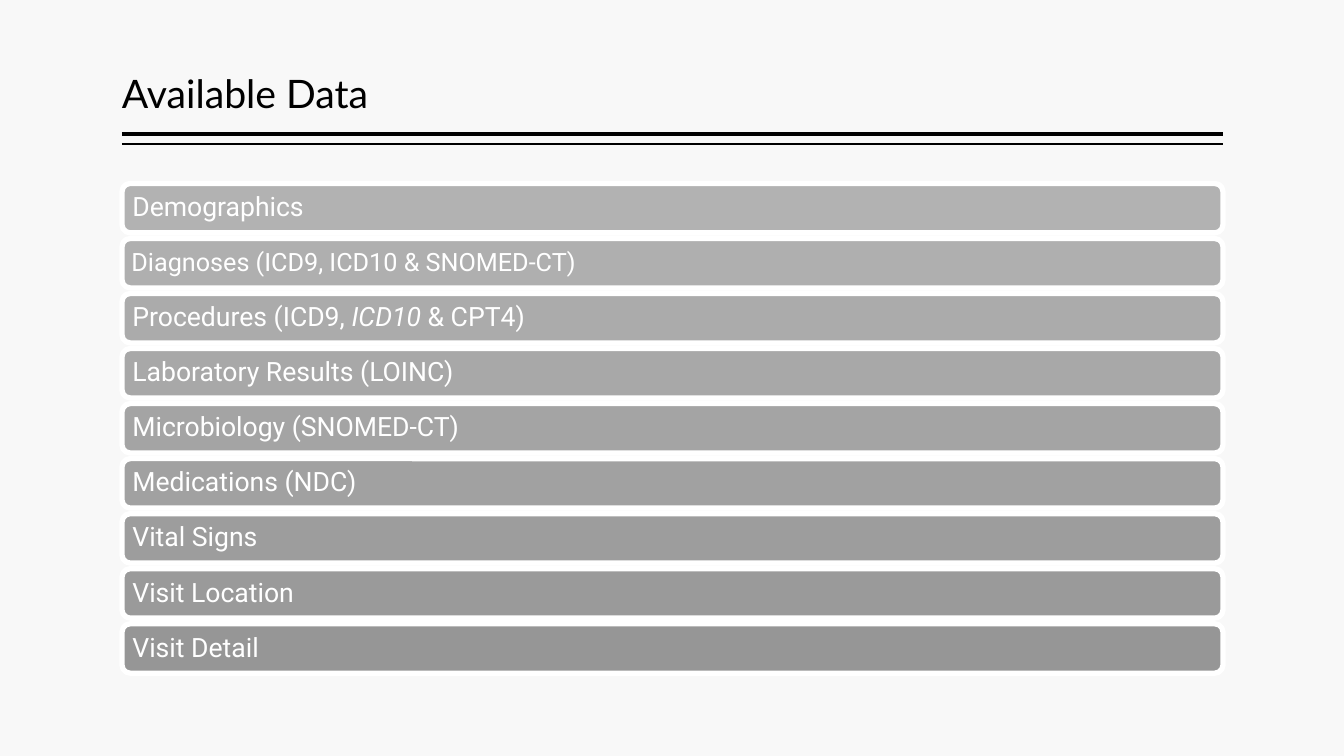
"""Build the Available Data slide."""
from dataclasses import dataclass

from lxml.etree import SubElement
from pptx import Presentation
from pptx.dml.color import RGBColor
from pptx.enum.shapes import MSO_CONNECTOR, MSO_SHAPE
from pptx.enum.text import MSO_ANCHOR, MSO_AUTO_SIZE, PP_ALIGN
from pptx.oxml.ns import qn
from pptx.util import Inches, Pt


@dataclass(frozen=True)
class Theme:
    """Colours, fonts and type sizes."""
    back: RGBColor = RGBColor(0xF8, 0xF8, 0xF8)
    ink: RGBColor = RGBColor(0, 0, 0)
    white: RGBColor = RGBColor(255, 255, 255)
    light: int = 0xB2
    head: str = "Lato"
    body: str = "Roboto"
    title: int = 28
    item: int = 19
    small: int = 18

    def shade(self, row):
        """Return the grey of a row, 3.5 levels darker each time."""
        return RGBColor(*[self.light - 7 * row // 2] * 3)


THEME = Theme()
LEFT, WIDTH = 1.21, 10.92
TOP, PITCH, HEIGHT = 1.82, 0.546, 0.49
RULES = [(1.33, 3), (1.43, 1)]
ITEMS = [
    [("Demographics", False)],
    [("Diagnoses (ICD9, ICD10 & SNOMED-CT)", False)],
    [("Procedures (ICD9, ", False), ("ICD10", True), (" & CPT4)", False)],
    [("Laboratory Results (LOINC)", False)],
    [("Microbiology (SNOMED-CT)", False)],
    [("Medications (NDC)", False)],
    [("Vital Signs", False)],
    [("Visit Location", False)],
    [("Visit Detail", False)],
]
SMALL_ROW = 1


def set_frame(frame, anchor, side, edge):
    """Set the anchor, wrap and insets of a text frame."""
    frame.auto_size = MSO_AUTO_SIZE.NONE
    frame.word_wrap = True
    frame.vertical_anchor = anchor
    frame.margin_left = frame.margin_right = Inches(side)
    frame.margin_top = frame.margin_bottom = Inches(edge)


def add_text(frame, runs, face, size, color):
    """Write runs of (text, italic) in the first paragraph."""
    para = frame.paragraphs[0]
    para.alignment = PP_ALIGN.LEFT
    para.line_spacing = 0.9
    for text, slant in runs:
        run = para.add_run()
        run.text = text
        font = run.font
        font.name, font.size, font.italic = face, Pt(size), slant
        font.color.rgb = color


def add_title(slide, text):
    """Place and fill the title."""
    title = slide.shapes.title
    title.left, title.top = Inches(LEFT), Inches(0.08)
    title.width, title.height = Inches(9.35), Inches(1.13)
    set_frame(title.text_frame, MSO_ANCHOR.BOTTOM, 0, 0.05)
    add_text(title.text_frame, [(text, False)],
             THEME.head, THEME.title, THEME.ink)


def add_rule(slide, top, weight):
    """Draw a rule below the title."""
    rule = slide.shapes.add_connector(
        MSO_CONNECTOR.STRAIGHT, Inches(LEFT), Inches(top),
        Inches(LEFT + WIDTH), Inches(top))
    rule.line.color.rgb = THEME.ink
    rule.line.width = Pt(weight)
    SubElement(rule._element.spPr, qn("a:effectLst"))


def add_bar(slide, row, runs):
    """Draw one rounded bar with its label."""
    bar = slide.shapes.add_shape(
        MSO_SHAPE.ROUNDED_RECTANGLE, Inches(LEFT),
        Inches(TOP + row * PITCH), Inches(WIDTH), Inches(HEIGHT))
    bar.shadow.inherit = False
    bar.fill.solid()
    bar.fill.fore_color.rgb = THEME.shade(row)
    bar.line.color.rgb = THEME.white
    bar.line.width = Pt(3.78)
    small = row == SMALL_ROW
    inset = 0.07 if small else 0.08
    set_frame(bar.text_frame, MSO_ANCHOR.MIDDLE, inset, inset)
    add_text(bar.text_frame, runs, THEME.body,
             THEME.small if small else THEME.item, THEME.white)


def main():
    """Build and save the slide."""
    deck = Presentation()
    deck.slide_width, deck.slide_height = Inches(13.33), Inches(7.5)
    slide = deck.slides.add_slide(deck.slide_layouts.get_by_name("Title Only"))
    slide.background.fill.solid()
    slide.background.fill.fore_color.rgb = THEME.back
    for top, weight in RULES:
        add_rule(slide, top, weight)
    add_title(slide, "Available Data")
    for row, runs in enumerate(ITEMS):
        add_bar(slide, row, runs)
    deck.save("out.pptx")


if __name__ == "__main__":
    main()
